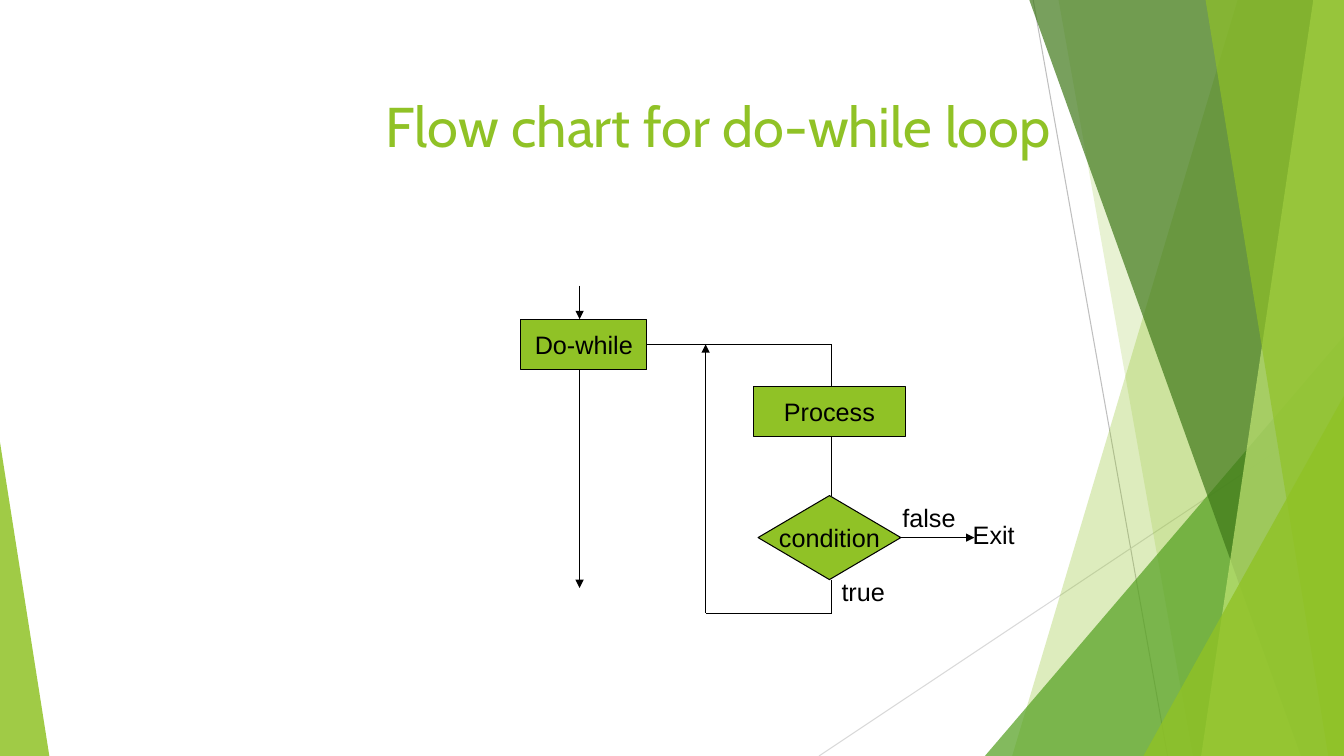
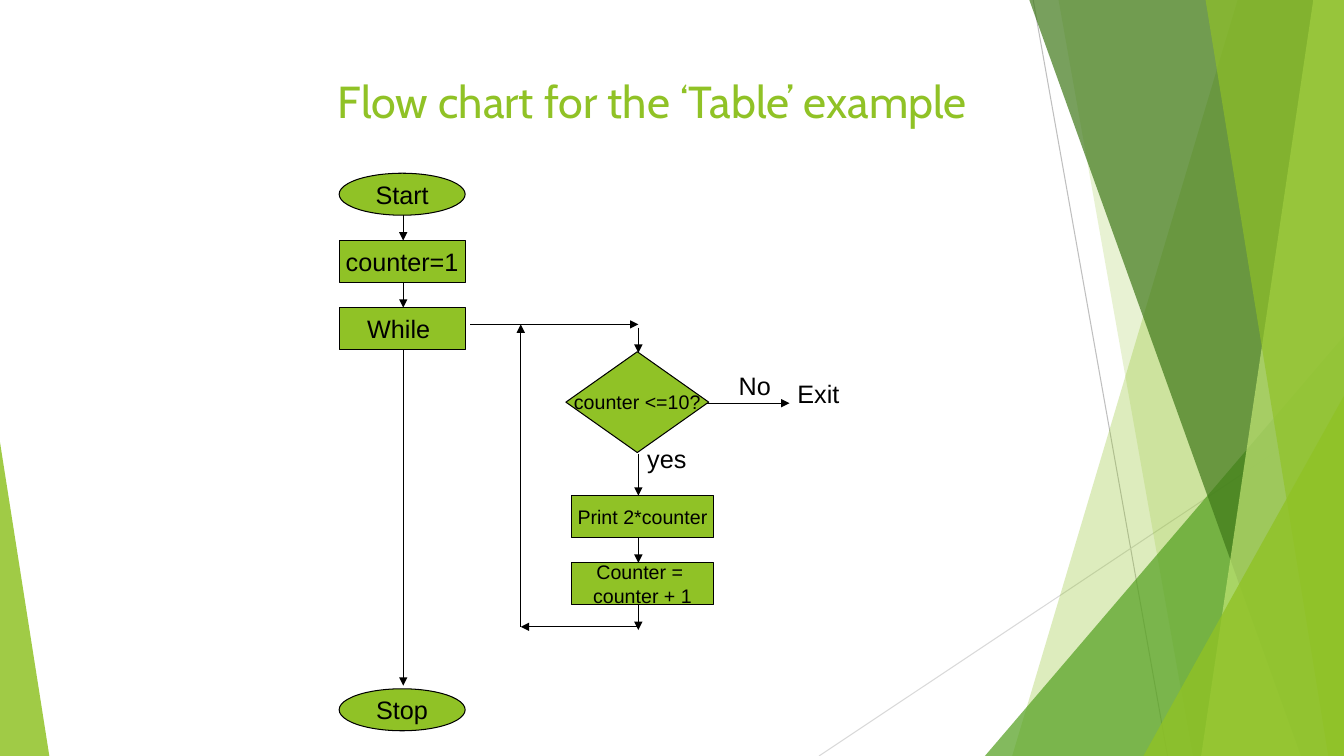
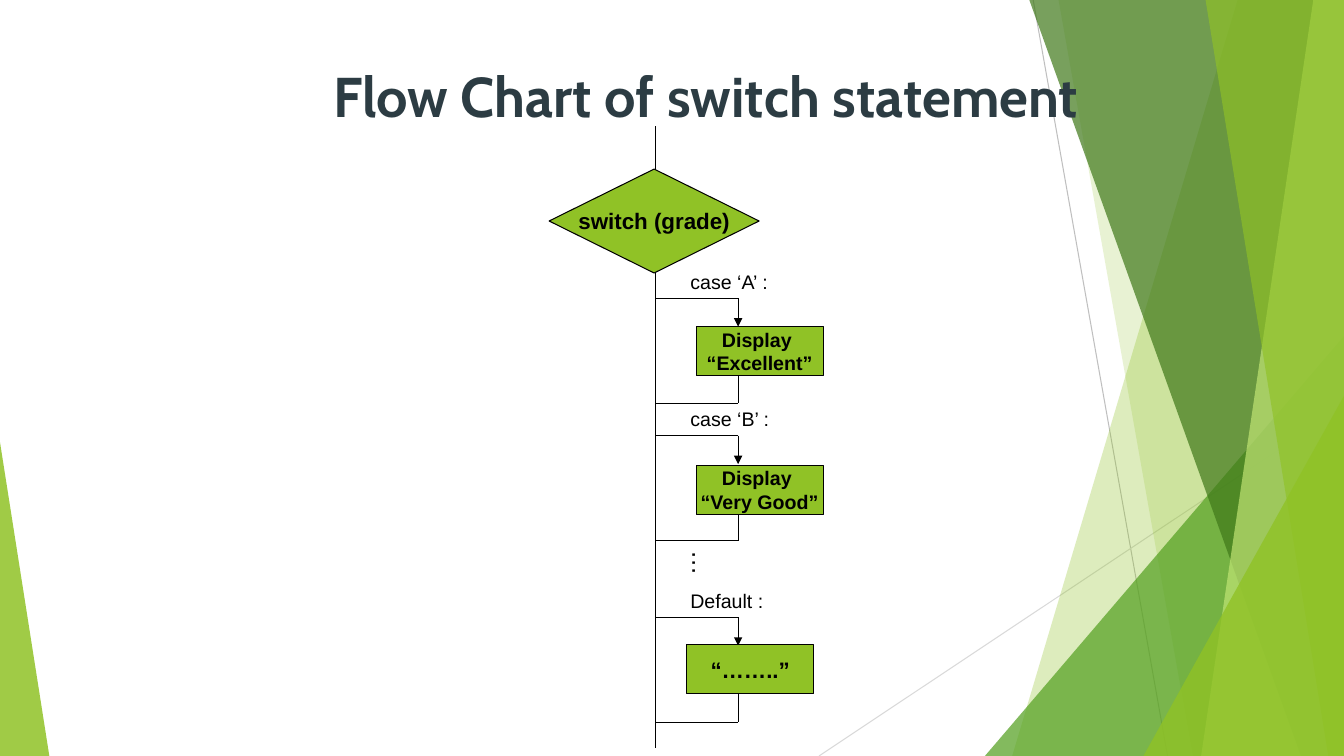
"""Three flow charts of loops and a switch on a green faceted master."""
from lxml import etree
from pptx import Presentation
from pptx.dml.color import RGBColor
from pptx.enum.shapes import MSO_CONNECTOR, MSO_SHAPE
from pptx.enum.text import MSO_ANCHOR, MSO_AUTO_SIZE, PP_ALIGN
from pptx.oxml.ns import qn
from pptx.util import Pt

PX = 9525
WIDE, HIGH = 1280, 720
GREEN = RGBColor(0x90, 0xC2, 0x26)
LEAF = RGBColor(0x54, 0xA0, 0x21)
MOSS = RGBColor(0x3F, 0x78, 0x19)
LIME = RGBColor(0xC0, 0xE4, 0x74)
SLATE = RGBColor(0x2C, 0x3C, 0x43)
BLACK = RGBColor(0, 0, 0)
SILVER = RGBColor(0xBF, 0xBF, 0xBF)
PALE = RGBColor(0xD9, 0xD9, 0xD9)
STRAIGHT = MSO_CONNECTOR.STRAIGHT
RECT, OVAL, DIAMOND = MSO_SHAPE.RECTANGLE, MSO_SHAPE.OVAL, MSO_SHAPE.DIAMOND
PROCESS, CHOICE = MSO_SHAPE.FLOWCHART_PROCESS, MSO_SHAPE.FLOWCHART_DECISION
WEDGE = MSO_SHAPE.ISOSCELES_TRIANGLE
LEFT, CENTER = PP_ALIGN.LEFT, PP_ALIGN.CENTER
TOP, MIDDLE = MSO_ANCHOR.TOP, MSO_ANCHOR.MIDDLE
GROW = MSO_AUTO_SIZE.SHAPE_TO_FIT_TEXT


def wire(slide, x1, y1, x2, y2, arrow=False, color=BLACK):
    line = slide.shapes.add_connector(STRAIGHT, x1 * PX, y1 * PX, x2 * PX, y2 * PX)
    line.line.color.rgb = color
    line.line.width = Pt(0.75)
    if arrow:
        etree.SubElement(line.get_or_add_ln(), qn("a:tailEnd"), type="triangle")
    etree.SubElement(line.element.spPr, qn("a:effectLst"))
    return line


def box(slide, kind, x, y, w, h, text, size=18, bold=False):
    spot = [n * PX for n in (x, y, w, h)]
    if kind is None:
        shape = slide.shapes.add_textbox(*spot)
        shape.text_frame.auto_size = GROW
    else:
        shape = slide.shapes.add_shape(kind, *spot)
        shape.shadow.inherit = False
        shape.fill.solid()
        shape.fill.fore_color.rgb = GREEN
        shape.line.color.rgb = BLACK
        shape.line.width = Pt(0.75)
        shape.text_frame.vertical_anchor = MIDDLE
    frame = shape.text_frame
    frame.word_wrap = False
    frame.text = text
    for para in frame.paragraphs:
        para.alignment = LEFT if kind is None else CENTER
        para.font.name = "Arial"
        para.font.size = Pt(size)
        para.font.bold = bold
        para.font.color.rgb = BLACK
    return shape


deck = Presentation()
deck.slide_width, deck.slide_height = WIDE * PX, HIGH * PX
plain = deck.slide_layouts[5]

titles = [
    ("Flow chart for do-while loop", 288, 82, 792, 151, CENTER, TOP, 40, GREEN, False),
    ("Flow chart for the ‘Table’ example", 312, 65, 792, 151, LEFT, TOP, 32, GREEN, False),
    ("Flow Chart of switch statement", 224, 13, 896, 155, CENTER, MIDDLE, 40, SLATE, True),
]
for text, x, y, w, h, align, anchor, size, color, bold in titles:
    title = deck.slides.add_slide(plain).shapes.title
    title.left, title.top, title.width, title.height = x * PX, y * PX, w * PX, h * PX
    title.text_frame.text = text
    title.text_frame.vertical_anchor = anchor
    para = title.text_frame.paragraphs[0]
    para.alignment = align
    para.font.name = "Cabin"
    para.font.size = Pt(size)
    para.font.bold = bold
    para.font.color.rgb = color
loop, table, switch = deck.slides

decor = [
    wire(loop, 984, 0, 1112, HIGH, color=SILVER),
    wire(loop, WIDE, 387, 780, HIGH, color=PALE),
]
facets = [
    (GREEN, 30, (1179, 964)),
    (GREEN, 20, (1008, 1136)),
    (LEAF, 72, (938, 320, 342, 1)),
    (MOSS, 70, (980, 1239)),
    (LIME, 70, (1251, 1144)),
    (GREEN, 65, (1148, 1265)),
    (GREEN, 80, (1089, 377, 191, 1)),
    (GREEN, 85, (0, 421, 47, 0)),
]
for color, alpha, spot in facets:
    if len(spot) == 2:
        head, foot = spot
        pen = loop.shapes.build_freeform(head, -1, scale=PX)
        pen.add_line_segments([(WIDE, -1), (WIDE, HIGH), (foot, HIGH)], close=True)
        facet = pen.convert_to_shape()
    else:
        x, y, w, peak = spot
        facet = loop.shapes.add_shape(WEDGE, x * PX, y * PX, w * PX, (HIGH - y) * PX)
        facet.adjustments[0] = peak
    facet.shadow.inherit = False
    facet.fill.solid()
    facet.fill.fore_color.rgb = color
    tint = facet.element.xpath(".//a:srgbClr")[0]
    etree.SubElement(tint, qn("a:alpha"), val=str(alpha * 1000))
    facet.line.fill.background()
    decor.append(facet)
for mark, part in enumerate(decor, 20):
    part.element.xpath(".//p:cNvPr")[0].set("id", str(mark))
    deck.slide_master.shapes.element.append(part.element)

for spec in [
    (PROCESS, 496, 304, 120, 48, "Do-while"),
    (CHOICE, 722, 472, 136, 80, "condition"),
    (PROCESS, 718, 368, 144, 48, "Process"),
    (None, 917, 490, 64, 38, "Exit"),
    (None, 792, 544, 68, 38, "true"),
    (None, 850, 474, 74, 38, "false"),
]:
    box(loop, *spec)
for spec in [
    (616, 328, 792, 328),
    (792, 328, 792, 368),
    (792, 416, 792, 472),
    (792, 552, 792, 584),
    (792, 584, 672, 584),
    (672, 584, 672, 328, True),
    (552, 272, 552, 304, True),
    (552, 352, 552, 560, True),
    (856, 512, 928, 512, True),
]:
    wire(loop, *spec)

for kind, y, text in [
    (OVAL, 165, "Start"),
    (RECT, 229, "counter=1"),
    (RECT, 293, "While "),
    (OVAL, 656, "Stop"),
]:
    box(table, kind, 323, y, 120, 40, text)
for spec in [
    (DIAMOND, 539, 335, 136, 96, "counter <=10?", 14),
    (RECT, 544, 472, 136, 40, "Print 2*counter", 14),
    (RECT, 544, 536, 136, 40, "Counter = \ncounter + 1", 14),
    (None, 694, 348, 54, 38, "No"),
    (None, 750, 356, 64, 38, "Exit"),
    (None, 607, 417, 62, 38, "yes"),
]:
    box(table, *spec)
for x, y1, y2 in [
    (384, 205, 229),
    (384, 269, 293),
    (384, 333, 653),
    (608, 312, 336),
    (608, 432, 472),
    (608, 512, 536),
    (608, 576, 600),
    (496, 597, 309),
]:
    wire(table, x, y1, x, y2, True)
for x1, x2, y in [(448, 608, 309), (608, 496, 597), (672, 752, 384)]:
    wire(table, x1, y, x2, y, True)

STEM, DROP = 624, 703
wire(switch, STEM, 120, STEM, 178)
box(switch, CHOICE, 523, 161, 200, 99, "switch (grade)", 16, True)
wire(switch, STEM, 260, STEM, 712)
for y, label, left, top, text, size in [
    (284, "case ‘A’ :", 663, 311, "Display \n“Excellent”", 14),
    (415, "case ‘B’ :", 663, 443, "Display \n“Very Good”", 14),
    (588, "Default :", 654, 614, "“……..”", 16),
]:
    wire(switch, STEM, y, DROP, y)
    wire(switch, DROP, y, DROP, y + 27, True)
    wire(switch, DROP, y + 73, DROP, y + 100)
    wire(switch, STEM, y + 100, DROP, y + 100)
    box(switch, None, 648, y - 32, 104, 32, label, 14)
    box(switch, RECT, left, top, 121, 47, text, size, True)
dots = box(switch, None, 638, 527, 62, 38, "…")
dots.text_frame.word_wrap = True
dots.rotation = 90

deck.save("out.pptx")
